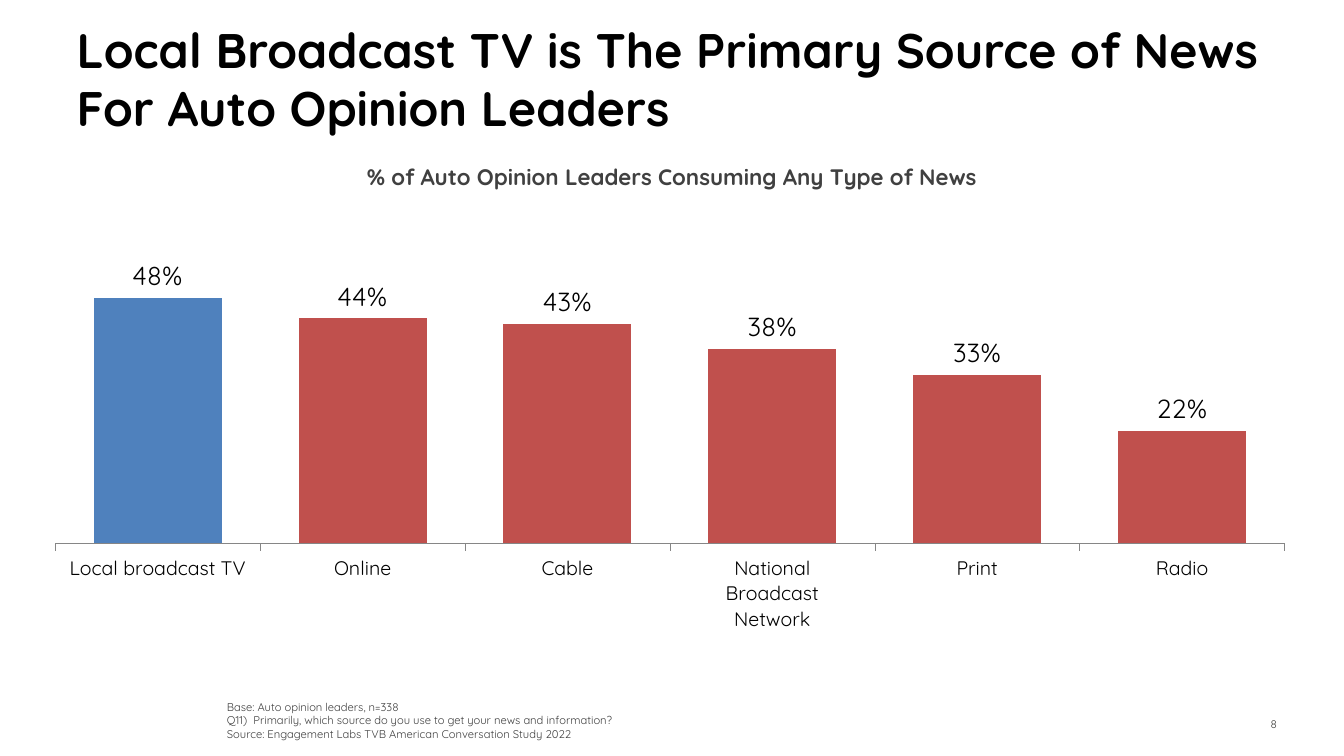
from dataclasses import dataclass

from lxml import etree
from pptx import Presentation
from pptx.chart.data import CategoryChartData
from pptx.dml.color import RGBColor as RGB
from pptx.enum.chart import XL_CHART_TYPE as ChartType
from pptx.enum.chart import XL_LABEL_POSITION as LabelPos
from pptx.enum.chart import XL_TICK_MARK as Tick
from pptx.enum.text import MSO_ANCHOR as Anchor
from pptx.enum.text import MSO_AUTO_SIZE as AutoSize
from pptx.enum.text import PP_ALIGN as Align
from pptx.oxml.ns import qn
from pptx.util import Pt

EMU_PER_PX = 4572


@dataclass(frozen=True)
class Theme:
    font: str = "Quicksand"
    black: RGB = RGB(0x00, 0x00, 0x00)
    grey: RGB = RGB(0x40, 0x40, 0x40)
    number: RGB = RGB(0x3C, 0x3C, 0x3A)
    axis: RGB = RGB(0x86, 0x86, 0x86)
    bar: RGB = RGB(0xC0, 0x50, 0x4D)
    highlight: RGB = RGB(0x4F, 0x81, 0xBD)
    title: float = 26
    subtitle: float = 12
    value: float = 14
    category: float = 10.5
    chart: float = 18
    note: float = 6
    number_gap: float = 8


THEME = Theme()

SHARES = {
    "Local broadcast TV": 0.48,
    "Online": 0.44,
    "Cable": 0.43,
    "National\nBroadcast\nNetwork": 0.38,
    "Print": 0.33,
    "Radio": 0.22,
}

NOTES = [
    "Base: Auto opinion leaders, n=338",
    "Q11)  Primarily, which source do you use to get your news and information?",
    "Source: Engagement Labs TVB American Conversation Study 2022",
]


def px(*lengths):
    return [n * EMU_PER_PX for n in lengths]


def style_font(font, size, color, bold=False):
    font.name = THEME.font
    font.size = Pt(size)
    font.bold = bold
    font.color.rgb = color


def add_run(p, text, size, color, bold=False):
    r = p.add_run()
    r.text = text
    style_font(r.font, size, color, bold)


def fill_text(tf, lines, size, color, bold=False, align=Align.LEFT):
    for i, line in enumerate(lines):
        p = tf.add_paragraph() if i else tf.paragraphs[0]
        p.alignment = align
        add_run(p, line, size, color, bold)


def add_title(s, box, text):
    sp = s.shapes.title
    sp.left, sp.top, sp.width, sp.height = px(*box)
    tf = sp.text_frame
    tf.word_wrap = True
    tf.auto_size = AutoSize.NONE
    tf.vertical_anchor = Anchor.TOP
    tf.margin_top = 0
    fill_text(tf, [text], THEME.title, THEME.black, bold=True)


def add_text(s, box, lines, size, color=THEME.grey, wrap=True, anchor=Anchor.TOP, **style):
    tf = s.shapes.add_textbox(*px(*box)).text_frame
    tf.word_wrap = wrap
    tf.vertical_anchor = anchor
    fill_text(tf, lines, size, color, **style)
    return tf


def add_page_number(s, box, number):
    tf = add_text(s, box, [number], THEME.note, THEME.number,
                  anchor=Anchor.MIDDLE, align=Align.RIGHT)
    add_run(tf.paragraphs[0], " ", THEME.number_gap, THEME.number)


def set_plot_layout(chart, x, y, w, h):
    area = chart._chartSpace.chart.plotArea
    for old in area.findall(qn("c:layout")):
        area.remove(old)
    layout = etree.Element(qn("c:layout"))
    manual = etree.SubElement(layout, qn("c:manualLayout"))
    settings = dict(layoutTarget="inner", xMode="edge", yMode="edge", x=x, y=y, w=w, h=h)
    for tag, val in settings.items():
        etree.SubElement(manual, qn(f"c:{tag}")).set("val", str(val))
    area.insert(0, layout)


def add_share_chart(s, box):
    data = CategoryChartData(number_format="0%")
    data.categories = list(SHARES)
    data.add_series("Series 1", list(SHARES.values()))
    chart = s.shapes.add_chart(ChartType.COLUMN_CLUSTERED, *px(*box), data).chart
    chart.has_legend = False
    chart.has_title = False
    style_font(chart.font, THEME.chart, THEME.black)
    set_plot_layout(chart, 0, 0.12, 1, 0.58)

    values = chart.value_axis
    values.visible = False
    values.has_major_gridlines = False
    values.minimum_scale = 0
    values.maximum_scale = 0.6

    categories = chart.category_axis
    categories.major_tick_mark = Tick.OUTSIDE
    categories.format.line.color.rgb = THEME.axis
    categories.format.line.width = Pt(0.25)
    style_font(categories.tick_labels.font, THEME.category, THEME.black)

    plot = chart.plots[0]
    plot.gap_width = 60
    plot.vary_by_categories = False
    series = plot.series[0]
    for fmt, color in ((series.format, THEME.bar), (series.points[0].format, THEME.highlight)):
        fmt.fill.solid()
        fmt.fill.fore_color.rgb = color

    labels = series.data_labels
    labels.show_value = True
    labels.number_format = "0%"
    labels.number_format_is_linked = False
    labels.position = LabelPos.OUTSIDE_END
    style_font(labels.font, THEME.value, THEME.black)


def main():
    prs = Presentation()
    prs.slide_width, prs.slide_height = px(2000, 1125)
    s = prs.slides.add_slide(prs.slide_layouts[5])
    add_title(s, (94, 30, 1852, 178),
              "Local Broadcast TV is The Primary Source of News For Auto Opinion Leaders")
    add_share_chart(s, (82, 258, 1830, 786))
    add_text(s, (518, 233, 964, 60), ["% of Auto Opinion Leaders Consuming Any Type of News"],
             THEME.subtitle, wrap=False, bold=True, align=Align.CENTER)
    add_text(s, (318, 1032, 1630, 80), NOTES, THEME.note, anchor=Anchor.BOTTOM)
    add_page_number(s, (1808, 1045, 118, 60), "8")
    prs.save("out.pptx")


if __name__ == "__main__":
    main()
